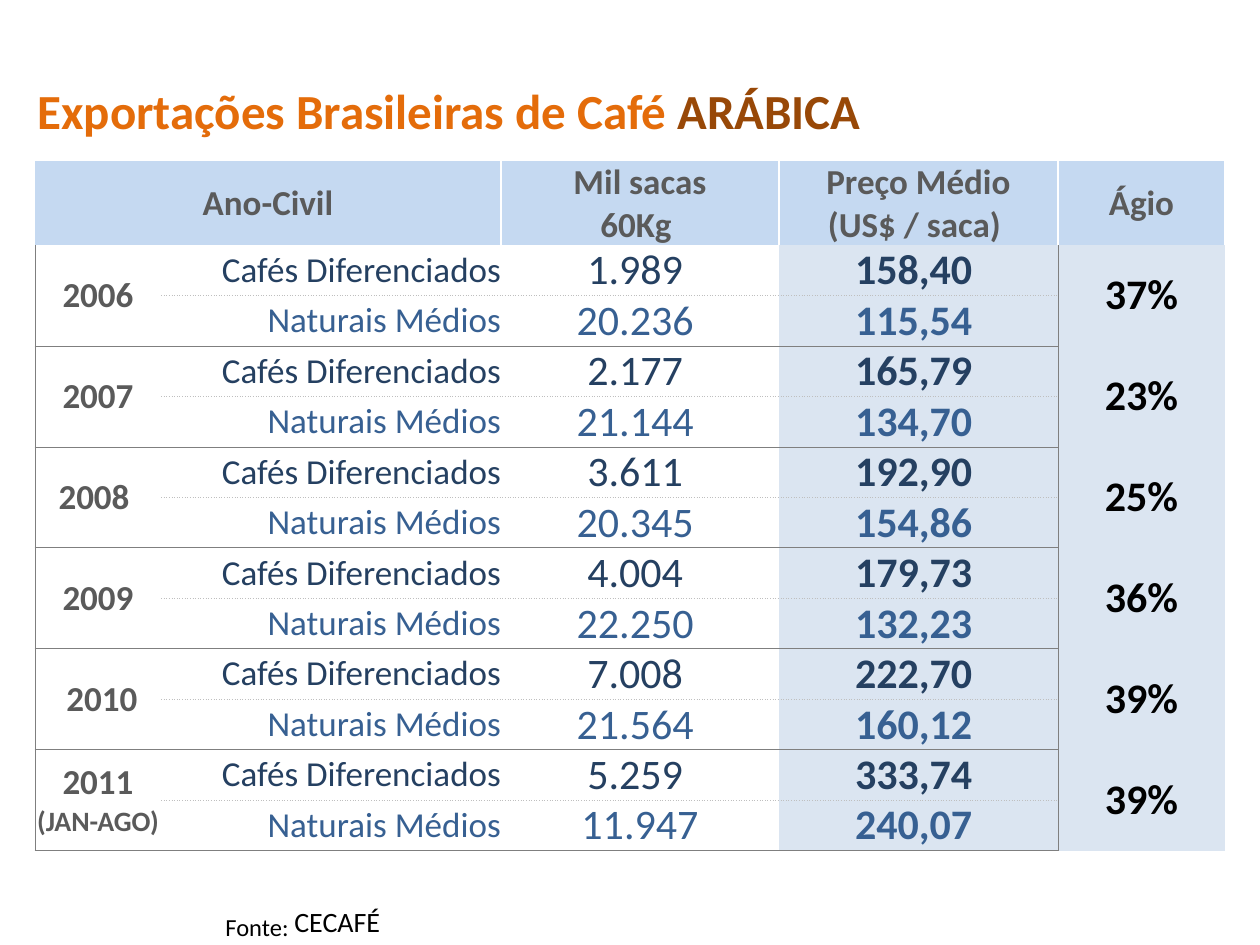
from dataclasses import dataclass
from typing import Optional

from lxml import etree
from pptx import Presentation
from pptx.dml.color import RGBColor
from pptx.enum.text import MSO_ANCHOR, MSO_AUTO_SIZE, PP_ALIGN
from pptx.oxml.ns import qn
from pptx.util import Emu, Pt

LEFT, CENTER, RIGHT = PP_ALIGN.LEFT, PP_ALIGN.CENTER, PP_ALIGN.RIGHT
TOP, MIDDLE = MSO_ANCHOR.TOP, MSO_ANCHOR.MIDDLE
NO_AUTOFIT = MSO_AUTO_SIZE.NONE

ORANGE = RGBColor(0xE4, 0x6C, 0x0A)
BROWN = RGBColor(0x98, 0x48, 0x07)
BLACK = RGBColor(0x00, 0x00, 0x00)
WHITE = RGBColor(0xFF, 0xFF, 0xFF)
GRAY_TEXT = RGBColor(0x5A, 0x5A, 0x5A)
GRAY_LINE = RGBColor(0x7F, 0x7F, 0x7F)
LIGHT_LINE = RGBColor(0xBF, 0xBF, 0xBF)
NAVY = RGBColor(0x25, 0x40, 0x61)
BLUE = RGBColor(0x37, 0x60, 0x92)
HEADER_FILL = RGBColor(0xC5, 0xD9, 0xF1)
PRICE_FILL = RGBColor(0xDB, 0xE5, 0xF1)

FONT = "Calibri"
EMU_PER_PX = 914400 / 126
NO_STYLE = "{2D5ABB26-0587-4C30-8999-92F81FD0307C}"
COLUMN_WIDTHS = (126, 340, 278, 279, 167)
HEADER_HEIGHT, ROW_HEIGHT = 84, 50
PREMIUM_COLUMN = 4


@dataclass(frozen=True)
class Line:
    color: RGBColor
    width: float
    dash: str


@dataclass(frozen=True)
class Style:
    size: int
    color: RGBColor
    bold: bool = False
    align: PP_ALIGN = CENTER


@dataclass(frozen=True)
class Coffee:
    name: str
    color: RGBColor


@dataclass(frozen=True)
class Year:
    label: str
    bags: tuple[str, str]
    prices: tuple[str, str]
    premium: str


WHITE_LINE = Line(WHITE, 1, "solid")
SOLID_LINE = Line(GRAY_LINE, 0.5, "solid")
DOTTED_LINE = Line(LIGHT_LINE, 0.5, "sysDot")
LABEL = Style(20, GRAY_TEXT, True)

COFFEES = (Coffee("Cafés Diferenciados", NAVY), Coffee("Naturais Médios", BLUE))
HEADERS = {0: "Ano-Civil", 2: " Mil sacas \n60Kg ", 3: " Preço Médio \n(US$ / saca) ", 4: "Ágio"}
YEARS = (
    Year("2006", ("1.989 ", "20.236 "), ("158,40 ", "115,54 "), "37%"),
    Year("2007", ("2.177 ", "21.144 "), ("165,79 ", "134,70 "), "23%"),
    Year("2008 ", ("3.611 ", "20.345 "), ("192,90 ", "154,86 "), "25%"),
    Year("2009", ("4.004 ", "22.250 "), ("179,73 ", "132,23 "), "36%"),
    Year(" 2010", ("7.008 ", "21.564 "), ("222,70 ", "160,12 "), "39%"),
    Year("2011\n(JAN-AGO)", ("5.259 ", "11.947"), ("333,74 ", "240,07 "), "39%"),
)


def px(length: int) -> Emu:
    return Emu(round(length * EMU_PER_PX))


def format_run(run, style: Style) -> None:
    run.font.name = FONT
    run.font.size = Pt(style.size)
    run.font.bold = style.bold
    run.font.color.rgb = style.color


def write_cell(cell, text: str, style: Style) -> None:
    cell.text_frame.paragraphs[0].text = text
    paragraph = cell.text_frame.paragraphs[0]
    paragraph.alignment = style.align
    for run in paragraph.runs:
        format_run(run, style)


def vertical_line(row: int, boundary: int) -> Optional[Line]:
    if row == 0:
        return WHITE_LINE if boundary in (2, 3, 4) else None
    return SOLID_LINE if boundary in (0, PREMIUM_COLUMN) else None


def horizontal_line(boundary: int, column: int) -> Optional[Line]:
    if boundary < 2 or column == PREMIUM_COLUMN:
        return None
    if boundary % 2:
        return SOLID_LINE
    return DOTTED_LINE if column > 0 else None


def draw_border(cell, side: str, line: Optional[Line]) -> None:
    if line is None:
        return
    properties = cell._tc.get_or_add_tcPr()
    border = etree.SubElement(properties, qn(f"a:ln{side}"), w=str(Pt(line.width)))
    fill = etree.SubElement(border, qn("a:solidFill"))
    etree.SubElement(fill, qn("a:srgbClr"), val=str(line.color))
    etree.SubElement(border, qn("a:prstDash"), val=line.dash)


def format_cell(cell, row: int, column: int) -> None:
    cell.margin_left = cell.margin_right = cell.margin_top = cell.margin_bottom = 0
    cell.vertical_anchor = MIDDLE
    height = cell.span_height if cell.is_merge_origin else 1
    width = cell.span_width if cell.is_merge_origin else 1
    draw_border(cell, "L", vertical_line(row, column))
    draw_border(cell, "R", vertical_line(row, column + width))
    draw_border(cell, "T", horizontal_line(row, column))
    draw_border(cell, "B", horizontal_line(row + height, column))
    if row == 0 or column >= 3:
        cell.fill.solid()
        cell.fill.fore_color.rgb = HEADER_FILL if row == 0 else PRICE_FILL
    else:
        cell.fill.background()


def add_export_table(slide) -> None:
    row_count = 1 + len(YEARS) * len(COFFEES)
    height = HEADER_HEIGHT + ROW_HEIGHT * (row_count - 1)
    table = slide.shapes.add_table(
        row_count, len(COLUMN_WIDTHS), px(35), px(161), px(sum(COLUMN_WIDTHS)), px(height)
    ).table
    table.first_row = table.horz_banding = False
    table._tbl.tblPr.find(qn("a:tableStyleId")).text = NO_STYLE
    for column, width in enumerate(COLUMN_WIDTHS):
        table.columns[column].width = px(width)
    for index, row in enumerate(table.rows):
        row.height = px(ROW_HEIGHT if index else HEADER_HEIGHT)

    table.cell(0, 0).merge(table.cell(0, 1))
    for column, text in HEADERS.items():
        write_cell(table.cell(0, column), text, LABEL)
    for index, year in enumerate(YEARS):
        first = 1 + index * len(COFFEES)
        for column in (0, PREMIUM_COLUMN):
            table.cell(first, column).merge(table.cell(first + 1, column))
        write_cell(table.cell(first, 0), year.label, LABEL)
        for run in table.cell(first, 0).text_frame.paragraphs[0].runs[1:]:
            run.font.size = Pt(16)
        write_cell(table.cell(first, PREMIUM_COLUMN), year.premium, Style(24, BLACK, True))
        for offset, coffee in enumerate(COFFEES):
            row = first + offset
            write_cell(table.cell(row, 1), coffee.name, Style(20, coffee.color, align=RIGHT))
            write_cell(table.cell(row, 2), year.bags[offset], Style(24, coffee.color))
            write_cell(table.cell(row, 3), year.prices[offset], Style(24, coffee.color, True))
    for row in range(row_count):
        for column in range(len(COLUMN_WIDTHS)):
            format_cell(table.cell(row, column), row, column)


def add_title(slide) -> None:
    title = slide.shapes.title
    title.left, title.top, title.width, title.height = px(25), px(74), px(860), px(72)
    frame = title.text_frame
    frame.auto_size = NO_AUTOFIT
    frame.word_wrap = False
    frame.vertical_anchor = TOP
    paragraph = frame.paragraphs[0]
    paragraph.alignment = LEFT
    for text, color in (("Exportações Brasileiras de Café ", ORANGE), ("ARÁBICA", BROWN)):
        run = paragraph.add_run()
        run.text = text
        format_run(run, Style(28, color, True))


def add_label(slide, text: str, left: int, top: int, width: int, height: int, size: int) -> None:
    frame = slide.shapes.add_textbox(px(left), px(top), px(width), px(height)).text_frame
    frame.word_wrap = False
    frame.text = text
    format_run(frame.paragraphs[0].runs[0], Style(size, BLACK))


def main() -> None:
    presentation = Presentation()
    presentation.slide_width, presentation.slide_height = px(1260), px(945)
    slide = presentation.slides.add_slide(presentation.slide_layouts[5])
    add_label(slide, "Fonte:", 213, 906, 89, 43, 14)
    add_label(slide, "CECAFÉ", 282, 898, 112, 47, 16)
    add_title(slide)
    add_export_table(slide)
    presentation.save("out.pptx")


if __name__ == "__main__":
    main()
